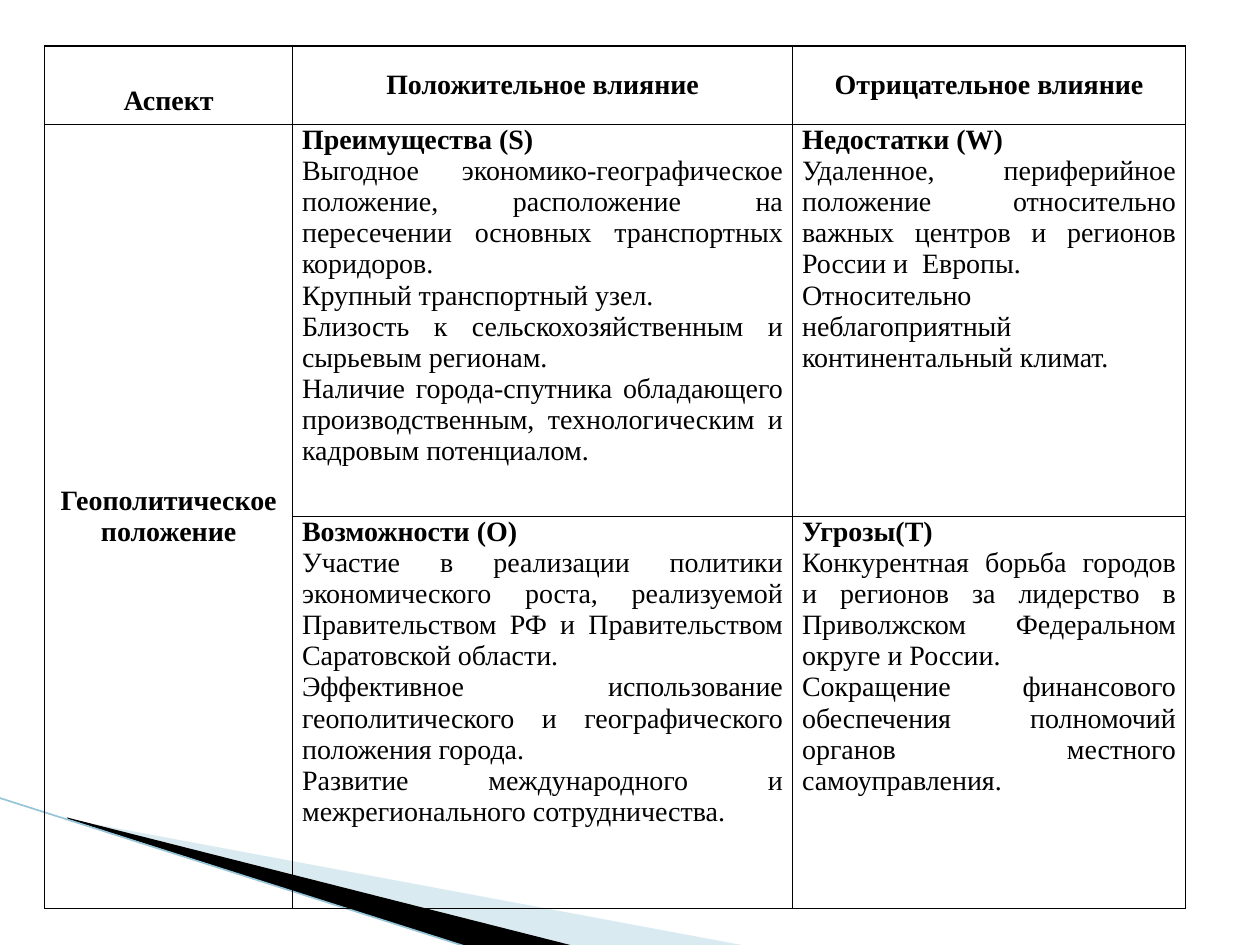
from lxml import etree
from pptx import Presentation
from pptx.dml.color import RGBColor
from pptx.enum.shapes import MSO_CONNECTOR
from pptx.enum.text import MSO_ANCHOR, PP_ALIGN
from pptx.oxml.ns import qn
from pptx.util import Cm, Pt

STRAIGHT = MSO_CONNECTOR.STRAIGHT
TOP, MIDDLE = MSO_ANCHOR.TOP, MSO_ANCHOR.MIDDLE
LEFT, CENTER, JUSTIFY = PP_ALIGN.LEFT, PP_ALIGN.CENTER, PP_ALIGN.JUSTIFY

COLORS = {"black": "000000", "wedge": "A0CBDC", "edge": "97C5D8"}
FONT = "Times New Roman"
HEADINGS = ["Аспект", "Положительное влияние", "Отрицательное влияние"]
ASPECT = "Геополитическое положение"
SWOT = [
    [
        [
            "Преимущества (S)",
            "Выгодное экономико-географическое положение, расположение на пересечении основных транспортных коридоров.",
            "Крупный транспортный узел.",
            "Близость к сельскохозяйственным и сырьевым регионам.",
            "Наличие города-спутника обладающего производственным, технологическим и кадровым потенциалом.",
        ],
        [
            "Недостатки (W)",
            "Удаленное, периферийное положение относительно важных центров и регионов России и  Европы.",
            "Относительно неблагоприятный континентальный климат.",
        ],
    ],
    [
        [
            "Возможности (O)",
            "Участие в реализации политики экономического роста, реализуемой Правительством РФ и Правительством Саратовской области.",
            "Эффективное использование геополитического и географического положения города.",
            "Развитие международного и межрегионального сотрудничества.",
        ],
        [
            "Угрозы(T)",
            "Конкурентная борьба городов и регионов за лидерство в Приволжском Федеральном округе и России.",
            "Сокращение финансового обеспечения полномочий органов местного самоуправления.",
        ],
    ],
]


class SwotSlide:
    """Holds the slide and its style and draws each kind of element."""

    def __init__(self, presentation):
        self.slide = presentation.slides.add_slide(presentation.slide_layouts[6])
        self.size = Pt(16)

    def color(self, name):
        return RGBColor.from_string(COLORS[name])

    def wedge(self, points, color, opacity=100):
        corners = [(Cm(x), Cm(y)) for x, y in points]
        builder = self.slide.shapes.build_freeform(*corners[0])
        builder.add_line_segments(corners[1:], close=True)
        shape = builder.convert_to_shape()
        shape.shadow.inherit = False
        shape.fill.solid()
        shape.fill.fore_color.rgb = self.color(color)
        shape.line.fill.background()
        if opacity < 100:
            fill = shape._element.spPr.find(qn("a:solidFill"))
            alpha = etree.SubElement(fill[0], qn("a:alpha"))
            alpha.set("val", str(opacity * 1000))

    def line(self, start, end, color, width):
        ends = [Cm(value) for value in (*start, *end)]
        connector = self.slide.shapes.add_connector(STRAIGHT, *ends)
        connector.line.color.rgb = self.color(color)
        connector.line.width = Pt(width)
        etree.SubElement(connector._element.spPr, qn("a:effectLst"))

    def table(self, left, top, widths, heights):
        frame = self.slide.shapes.add_table(
            len(heights), len(widths), Cm(left), Cm(top), Cm(sum(widths)), Cm(sum(heights))
        )
        table = frame.table
        table.first_row = table.horz_banding = False
        for column, width in zip(table.columns, widths):
            column.width = Cm(width)
        for row, height in zip(table.rows, heights):
            row.height = Cm(height)
        for cell in table.iter_cells():
            self.format_cell(cell)
        return table

    def format_cell(self, cell):
        cell.margin_left = cell.margin_right = Cm(0.19)
        cell.margin_top = cell.margin_bottom = 0
        properties = cell._tc.get_or_add_tcPr()
        for side in ("lnL", "lnR", "lnT", "lnB"):
            border = etree.SubElement(properties, qn(f"a:{side}"), w=str(Pt(1)))
            fill = etree.SubElement(border, qn("a:solidFill"))
            etree.SubElement(fill, qn("a:srgbClr"), val=COLORS["black"])
        cell.fill.background()

    def cell_text(self, cell, lines, alignment, anchor):
        cell.vertical_anchor = anchor
        cell.text_frame.text = "\n".join(lines)
        for index, paragraph in enumerate(cell.text_frame.paragraphs):
            paragraph.alignment = alignment
            for run in paragraph.runs:
                run.font.name = FONT
                run.font.size = self.size
                run.font.bold = index == 0
                run.font.color.rgb = self.color("black")


def main():
    presentation = Presentation()
    presentation.slide_width, presentation.slide_height = Cm(25.4), Cm(19.05)
    swot = SwotSlide(presentation)

    swot.wedge([(1.4, 16.52), (15.11, 19.08), (11.58, 19.08)], "wedge", 40)
    swot.wedge([(1.35, 16.48), (11.61, 19.08), (9.45, 19.1), (1.37, 16.51)], "black")
    swot.line((-0.03, 16.08), (9.45, 19.1), "edge", 0.95)

    table = swot.table(0.9, 0.93, [5, 10.08, 7.92], [1.58, 7.9, 7.9])
    for column, heading in enumerate(HEADINGS):
        swot.cell_text(table.cell(0, column), [heading], CENTER, MIDDLE)
    table.cell(0, 0).margin_top = Cm(0.62)

    table.cell(1, 0).merge(table.cell(2, 0))
    swot.cell_text(table.cell(1, 0), [ASPECT], CENTER, MIDDLE)
    for row, groups in enumerate(SWOT, start=1):
        for column, lines in enumerate(groups, start=1):
            swot.cell_text(table.cell(row, column), lines, JUSTIFY, TOP)
    table.cell(1, 2).text_frame.paragraphs[-1].alignment = LEFT

    presentation.save("out.pptx")


if __name__ == "__main__":
    main()
